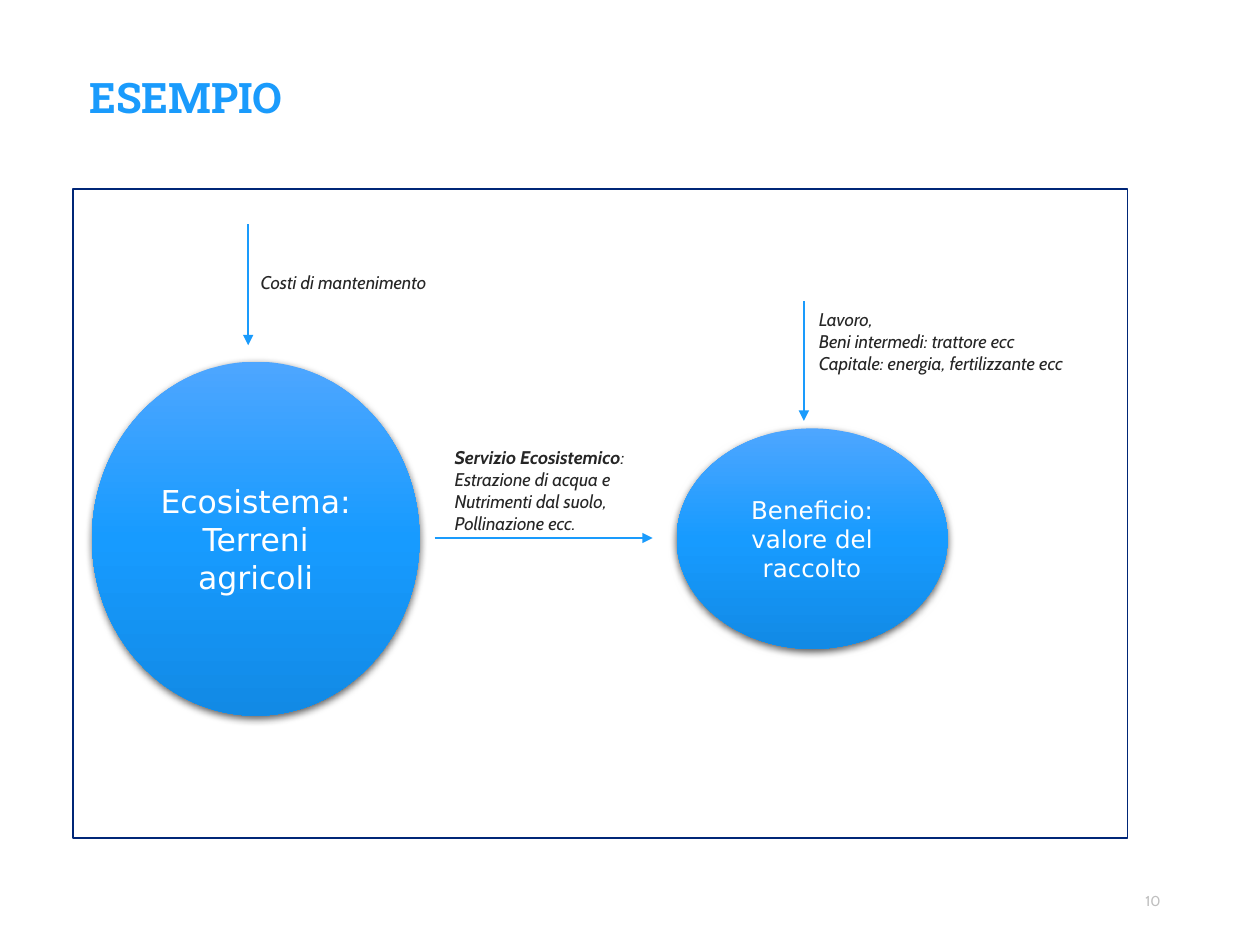
from dataclasses import dataclass

from lxml import etree
from pptx import Presentation
from pptx.dml.color import RGBColor
from pptx.enum.shapes import MSO_CONNECTOR, MSO_SHAPE
from pptx.enum.text import MSO_ANCHOR, PP_ALIGN
from pptx.oxml import parse_xml
from pptx.oxml.ns import nsdecls, qn
from pptx.util import Inches, Pt

STRAIGHT = MSO_CONNECTOR.STRAIGHT
OVAL, RECTANGLE = MSO_SHAPE.OVAL, MSO_SHAPE.RECTANGLE
MIDDLE = MSO_ANCHOR.MIDDLE
LEFT, CENTER, RIGHT = PP_ALIGN.LEFT, PP_ALIGN.CENTER, PP_ALIGN.RIGHT


@dataclass(frozen=True)
class Theme:
    accent: str = "1A9BFC"
    frame: str = "002677"
    ink: str = "262626"
    muted: str = "BFBFBF"
    white: str = "FFFFFF"
    gradient: tuple = ((0, "4EA6FF"), (50, "179BFF"), (100, "128AE5"))
    heading_font: str = "Roboto Slab"
    label_font: str = "Cabin"
    node_font: str = "DejaVu Sans"
    title_size: float = 24
    ecosystem_size: float = 18
    benefit_size: float = 14
    label_size: float = 10.5
    number_size: float = 8.2


THEME = Theme()


def write(frame, lines, font, size, color, align=LEFT, bold=None, italic=None):
    """Fill a text frame, one paragraph per line; a line is a list of (text, bold)."""
    frame.word_wrap = True
    frame.vertical_anchor = MIDDLE
    for index, line in enumerate(lines):
        paragraph = frame.paragraphs[0] if index == 0 else frame.add_paragraph()
        paragraph.alignment = align
        paragraph.font.name = font
        paragraph.font.size = Pt(size)
        paragraph.font.color.rgb = RGBColor.from_string(color)
        paragraph.font.bold = bold
        paragraph.font.italic = italic
        for text, run_bold in [(line, None)] if isinstance(line, str) else line:
            run = paragraph.add_run()
            run.text = text
            run.font.bold = run_bold


def add_text(slide, box, lines, *style, **options):
    frame = slide.shapes.add_textbox(*map(Inches, box)).text_frame
    write(frame, lines, *style, **options)
    return frame


def add_title(slide, box):
    frame = add_text(slide, box, ["ESEMPIO"], THEME.heading_font,
                     THEME.title_size, THEME.accent, bold=True)
    frame.paragraphs[0].line_spacing = 0.9


def add_page_number(slide, box):
    add_text(slide, box, ["10"], THEME.label_font, THEME.number_size,
             THEME.muted, align=RIGHT)


def add_label(slide, box, lines):
    add_text(slide, box, lines, THEME.label_font, THEME.label_size,
             THEME.ink, italic=True)


def add_node(slide, box, lines, size):
    """Shaded ellipse with a soft shadow below it."""
    node = slide.shapes.add_shape(OVAL, *map(Inches, box))
    node.line.fill.background()
    stops = "".join(f'<a:gs pos="{at * 1000}"><a:srgbClr val="{color}"/></a:gs>'
                    for at, color in THEME.gradient)
    geometry = node._element.spPr.find(qn("a:prstGeom"))
    geometry.addnext(parse_xml(
        f'<a:gradFill {nsdecls("a")} rotWithShape="1"><a:gsLst>{stops}</a:gsLst>'
        '<a:lin ang="5400000" scaled="0"/></a:gradFill>'))
    node._element.spPr.append(parse_xml(
        f'<a:effectLst {nsdecls("a")}>'
        f'<a:outerShdw blurRad="{Pt(4.5)}" dist="{Pt(1.5)}" dir="5400000" rotWithShape="0">'
        '<a:srgbClr val="000000"><a:alpha val="63000"/></a:srgbClr>'
        '</a:outerShdw></a:effectLst>'))
    write(node.text_frame, lines, THEME.node_font, size, THEME.white, align=CENTER)


def add_arrow(slide, start, end):
    arrow = slide.shapes.add_connector(STRAIGHT, *map(Inches, (*start, *end)))
    arrow.line.color.rgb = RGBColor.from_string(THEME.accent)
    arrow.line.width = Pt(1.5)
    etree.SubElement(arrow.line._get_or_add_ln(), qn("a:tailEnd"), type="triangle")
    etree.SubElement(arrow._element.spPr, qn("a:effectLst"))


def add_frame(slide, box):
    border = slide.shapes.add_shape(RECTANGLE, *map(Inches, box))
    border.shadow.inherit = False
    border.fill.background()
    border.line.color.rgb = RGBColor.from_string(THEME.frame)
    border.line.width = Pt(1)


def add_diagram(slide, box):
    """Ecosystem and benefit, with the flows into and between them."""
    left, top, _, _ = box

    def at(x, y, *size):
        return left + x, top + y, *size

    # Nodes
    add_node(slide, at(0.15, 1.37, 2.6, 2.81), ["Ecosistema: Terreni agricoli"],
             THEME.ecosystem_size)
    add_node(slide, at(4.79, 1.9, 2.15, 1.75), ["Beneficio:", "valore del raccolto"],
             THEME.benefit_size)

    # Flows
    add_arrow(slide, at(2.87, 2.77), at(4.6, 2.77))
    add_arrow(slide, at(1.39, 0.28), at(1.39, 1.24))
    add_arrow(slide, at(5.8, 0.89), at(5.8, 1.84))

    # Flow labels
    add_label(slide, at(2.93, 1.76, 1.75, 1.26),
              [[("Servizio Ecosistemico", True), (":", None)],
               "Estrazione di acqua e", "Nutrimenti dal suolo,", "Pollinazione ecc."])
    add_label(slide, at(5.82, 0.71, 2.4, 1),
              ["Lavoro,", "Beni intermedi: trattore ecc",
               "Capitale: energia, fertilizzante ecc"])
    add_label(slide, at(1.39, 0.24, 1.7, 1), ["Costi di mantenimento"])

    add_frame(slide, box)


def main():
    deck = Presentation()
    deck.slide_width, deck.slide_height = Inches(10), Inches(7.5)
    slide = deck.slides.add_slide(deck.slide_layouts[6])
    add_page_number(slide, (7.06, 6.95, 2.25, 0.4))
    add_title(slide, (0.61, 0.38, 8.62, 0.83))
    add_diagram(slide, (0.58, 1.5, 8.37, 5.15))
    deck.save("out.pptx")


if __name__ == "__main__":
    main()
